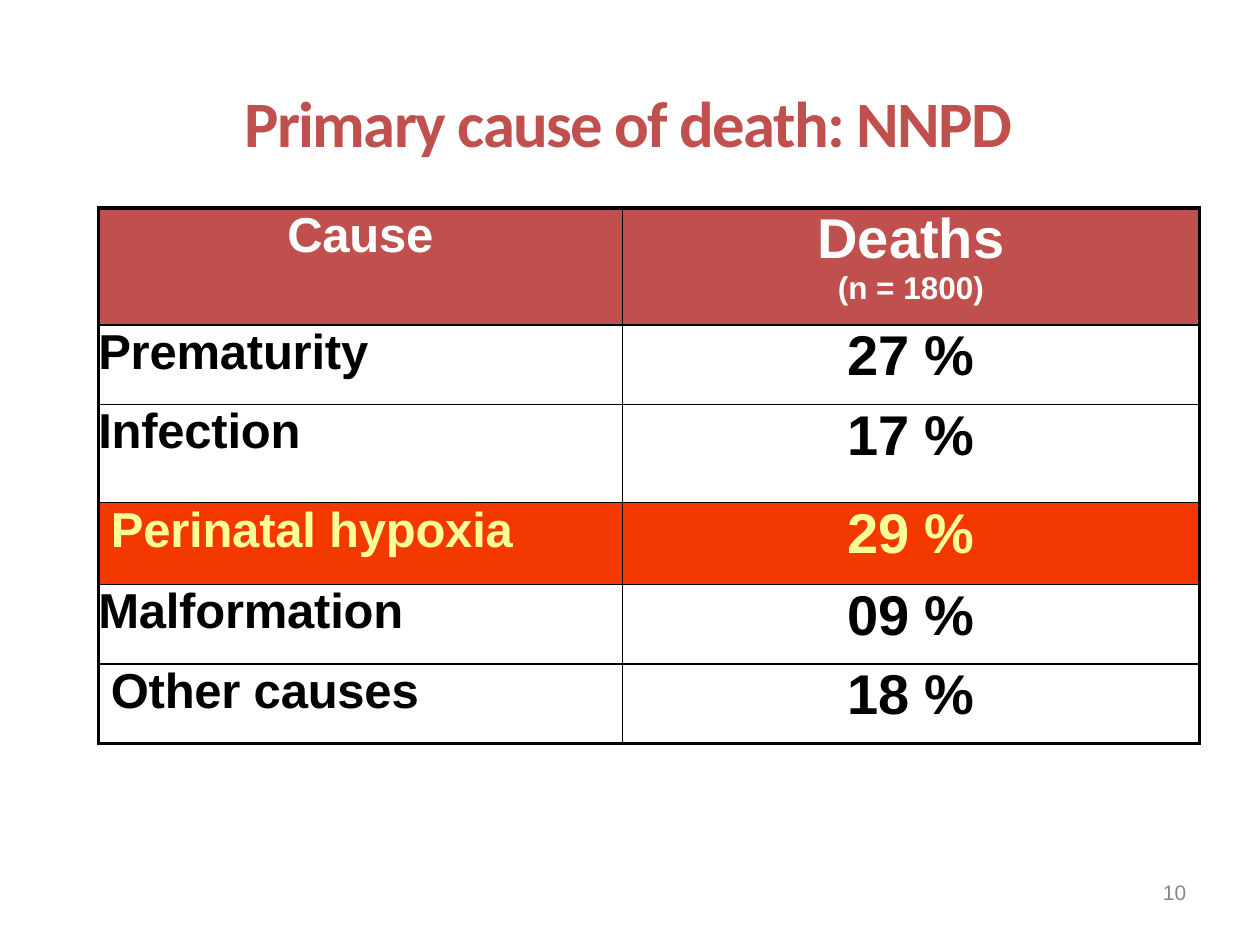
from dataclasses import dataclass

from lxml import etree
from pptx import Presentation
from pptx.dml.color import RGBColor
from pptx.enum.text import MSO_ANCHOR, PP_ALIGN
from pptx.oxml.ns import qn
from pptx.util import Inches, Pt

LEFT, CENTER = PP_ALIGN.LEFT, PP_ALIGN.CENTER
TOP = MSO_ANCHOR.TOP


@dataclass(frozen=True)
class Theme:
    heading_font: str = "Calibri"
    body_font: str = "Arial"
    accent: str = "C0504D"
    highlight: str = "F43900"
    highlight_text: str = "FFFF99"
    light: str = "FFFFFF"
    dark: str = "000000"
    muted: str = "888888"
    title_size: int = 37
    value_size: int = 32
    label_size: int = 28
    note_size: int = 18
    number_size: int = 12
    outer_line: float = 2.25
    inner_line: float = 1


THEME = Theme()
COLUMN_WIDTHS = (4.16, 4.58)
HEADER_HEIGHT = 0.93
# Cause, share of deaths, row height, indent, highlighted
CAUSES = (
    ("Prematurity", "27", 0.63, 0, False),
    ("Infection", "17", 0.78, 0, False),
    ("Perinatal hypoxia", "29", 0.65, 0.1, True),
    ("Malformation", "09", 0.63, 0, False),
    ("Other causes", "18", 0.63, 0.1, False),
)


def add_span(para, text, size, color, font=THEME.body_font, bold=True, spacing=0):
    span = para.add_run()
    span.text = text
    span.font.size = Pt(size)
    span.font.name = font
    span.font.bold = bold
    span.font.color.rgb = RGBColor.from_string(color)
    if spacing:
        span.font._element.set("spc", str(round(spacing * 100)))


def clear_margins(holder):
    holder.margin_left = holder.margin_right = 0
    holder.margin_top = holder.margin_bottom = 0
    holder.vertical_anchor = TOP


def format_para(para, align=LEFT, before=2, indent=0):
    para.alignment = align
    para.space_before = Pt(before)
    if indent:
        para._p.get_or_add_pPr().set("marL", str(Inches(indent)))


def set_borders(cell, widths):
    """Draw the left, right, top and bottom lines, ahead of the fill."""
    properties = cell._tc.get_or_add_tcPr()
    for index, (side, width) in enumerate(zip("LRTB", widths)):
        line = etree.Element(qn(f"a:ln{side}"), w=str(Pt(width)))
        fill = etree.SubElement(line, qn("a:solidFill"))
        etree.SubElement(fill, qn("a:srgbClr"), val=THEME.dark)
        properties.insert(index, line)


def fill_cell(cell, color):
    clear_margins(cell)
    if color:
        cell.fill.solid()
        cell.fill.fore_color.rgb = RGBColor.from_string(color)
    else:
        cell.fill.background()


def place_title(page, box):
    title = page.shapes.title
    title.left, title.top, title.width, title.height = map(Inches, box)
    frame = title.text_frame
    clear_margins(frame)
    para = frame.paragraphs[0]
    format_para(para, before=0, indent=0.01)
    add_span(para, "Primary cause of death: NNPD", THEME.title_size,
             THEME.accent, THEME.heading_font, spacing=-0.9)


def fill_header(cause, deaths):
    para = cause.text_frame.paragraphs[0]
    format_para(para, CENTER)
    add_span(para, "Cause", THEME.label_size, THEME.light, spacing=-0.1)
    para = deaths.text_frame.paragraphs[0]
    format_para(para, CENTER)
    add_span(para, "Deaths", THEME.value_size, THEME.light)
    para = deaths.text_frame.add_paragraph()
    format_para(para, CENTER, before=0)
    add_span(para, "(n = 1800)", THEME.note_size, THEME.light)


def place_table(page, box):
    heights = [HEADER_HEIGHT] + [row[2] for row in CAUSES]
    table = page.shapes.add_table(len(heights), len(COLUMN_WIDTHS),
                                  *map(Inches, box)).table
    table.first_row = table.horz_banding = False
    for column, width in zip(table.columns, COLUMN_WIDTHS):
        column.width = Inches(width)
    for row, height in zip(table.rows, heights):
        row.height = Inches(height)

    # Fills and borders: heavy frame, thin inner lines
    fills = [THEME.accent] + [THEME.highlight if row[4] else None for row in CAUSES]
    last_row, last_column = len(heights) - 1, len(COLUMN_WIDTHS) - 1
    for r, color in enumerate(fills):
        for c in range(last_column + 1):
            cell = table.cell(r, c)
            fill_cell(cell, color)
            on_frame = (c == 0, c == last_column, r == 0, r == last_row)
            set_borders(cell, [THEME.outer_line if outer else THEME.inner_line
                               for outer in on_frame])

    # Wording
    fill_header(table.cell(0, 0), table.cell(0, 1))
    for r, (cause, share, _, indent, highlighted) in enumerate(CAUSES, 1):
        color = THEME.highlight_text if highlighted else THEME.dark
        para = table.cell(r, 0).text_frame.paragraphs[0]
        format_para(para, indent=indent)
        add_span(para, cause, THEME.label_size, color, spacing=-0.1)
        para = table.cell(r, 1).text_frame.paragraphs[0]
        format_para(para, CENTER)
        add_span(para, f"{share} %", THEME.value_size, color)


def place_page_number(page, box):
    frame = page.shapes.add_textbox(*map(Inches, box)).text_frame
    clear_margins(frame)
    frame.word_wrap = True
    para = frame.paragraphs[0]
    format_para(para, before=0, indent=0.03)
    para.line_spacing = Pt(THEME.number_size)
    add_span(para, "10", THEME.number_size, THEME.muted, bold=False)


def main():
    deck = Presentation()
    deck.slide_width, deck.slide_height = Inches(10), Inches(7.5)
    page = deck.slides.add_slide(deck.slide_layouts[5])
    place_page_number(page, (9.2, 7.01, 0.3, 0.18))
    place_title(page, (1.93, 0.66, 6.48, 0.64))
    place_table(page, (0.78, 1.65, 8.74, 4.26))
    deck.save("out.pptx")


if __name__ == "__main__":
    main()
